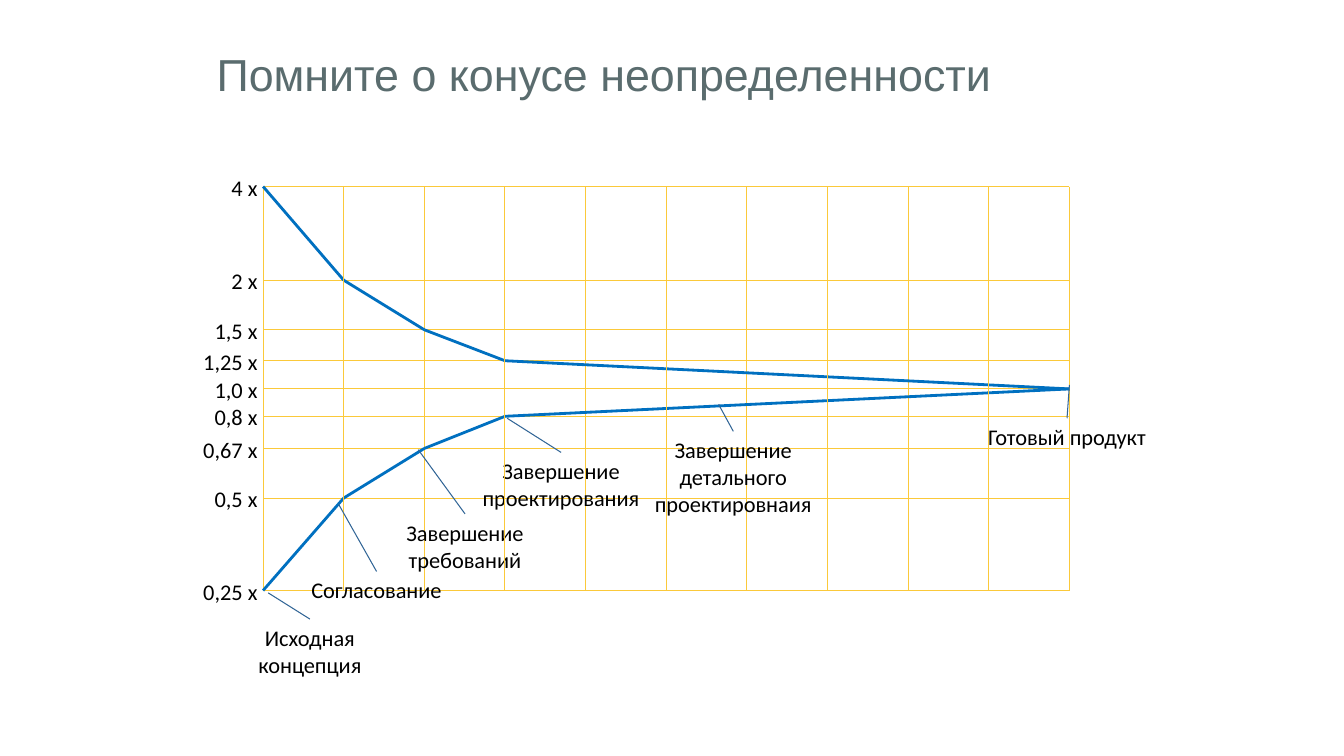
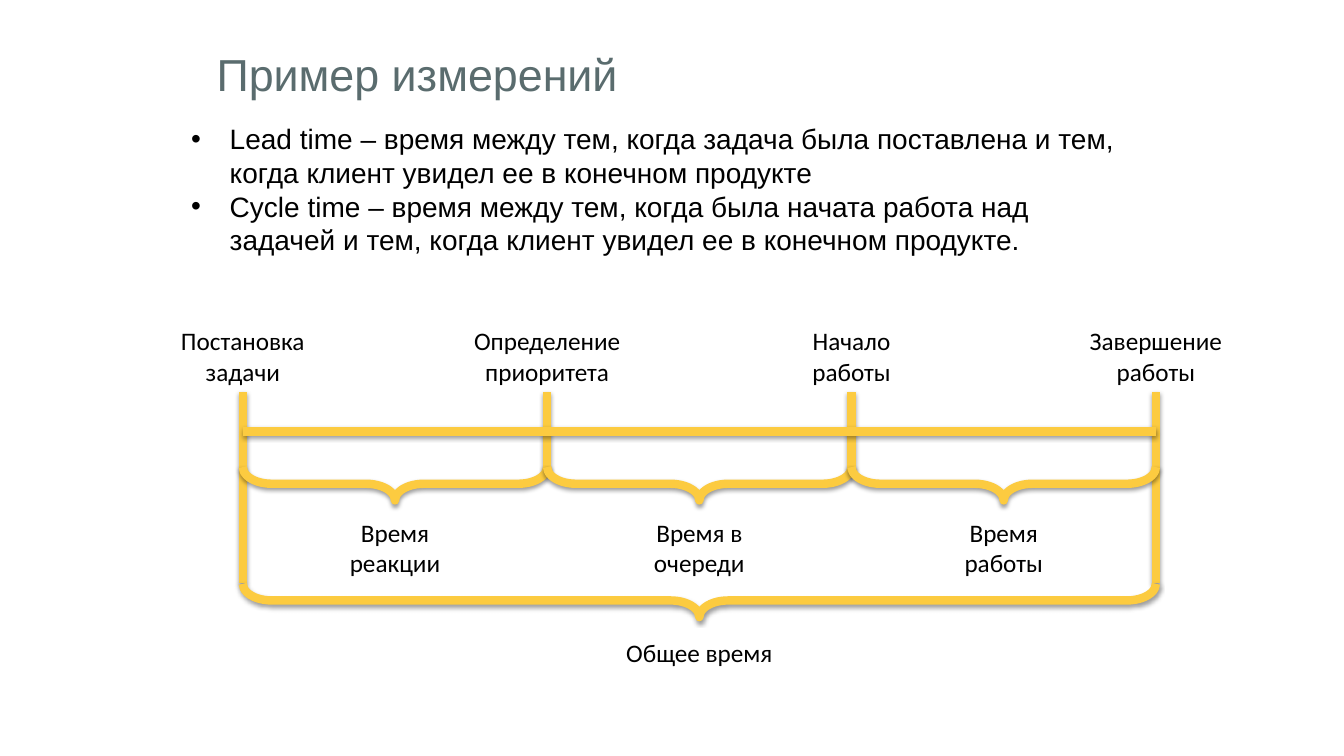
import pptx
import pptx.dml.color
import pptx.enum.shapes
import pptx.enum.text
import pptx.oxml
import pptx.oxml.ns
import pptx.util
from itertools import pairwise

Cm = pptx.util.Cm
Pt = pptx.util.Pt
RGBColor = pptx.dml.color.RGBColor
Align = pptx.enum.text.PP_ALIGN

SLATE = RGBColor(0x5A, 0x6C, 0x6E)
BLACK = RGBColor(0x00, 0x00, 0x00)
AMBER = RGBColor(0xFB, 0xC9, 0x3A)
GOLD = RGBColor(0xFC, 0xCB, 0x40)
BLUE = RGBColor(0x00, 0x70, 0xC0)
NAVY = RGBColor(0x31, 0x65, 0x96)

DRAWING = pptx.oxml.ns.nsdecls("a")
SHADOW = (
    f'<a:effectLst {DRAWING}><a:outerShdw blurRad="40000" dist="20000" dir="5400000" '
    'rotWithShape="0"><a:srgbClr val="000000"><a:alpha val="38000"/></a:srgbClr>'
    "</a:outerShdw></a:effectLst>"
)
NO_EFFECT = f"<a:effectLst {DRAWING}/>"


def write(paragraph, text, *, size, font="Calibri", color=BLACK,
          align=Align.LEFT, bullet=False, spacing=None):
    if bullet:
        properties = paragraph._p.get_or_add_pPr()
        properties.set("marL", str(Cm(0.97)))
        properties.set("indent", str(-Cm(0.97)))
        properties.append(pptx.oxml.parse_xml(f'<a:buFont {DRAWING} typeface="Arial"/>'))
        properties.append(pptx.oxml.parse_xml(f'<a:buChar {DRAWING} char="•"/>'))
    paragraph.alignment = align
    if spacing:
        paragraph.line_spacing = spacing
    run = paragraph.add_run()
    run.text = text
    run.font.size = Pt(size)
    run.font.name = font
    run.font.color.rgb = color


class Deck:
    """Hold the presentation style and the slide being drawn."""

    def __init__(self):
        self.presentation = pptx.Presentation()
        self.presentation.slide_width = Cm(33.87)
        self.presentation.slide_height = Cm(19.05)
        self.slide = None

    def start_slide(self, title):
        layout = self.presentation.slide_layouts[6]
        self.slide = self.presentation.slides.add_slide(layout)
        self.text([title], 5.36, 0.99, 25.37, 2.01, margins=(0.1, 0.2),
                  size=32, font="Arial", color=SLATE)

    def text(self, paragraphs, left, top, width, height, margins=(0.25, 0.13), **style):
        box = self.slide.shapes.add_textbox(Cm(left), Cm(top), Cm(width), Cm(height))
        frame = box.text_frame
        frame.word_wrap = True
        frame.margin_left = frame.margin_right = Cm(margins[0])
        frame.margin_top = frame.margin_bottom = Cm(margins[1])
        for index, text in enumerate(paragraphs):
            paragraph = frame.add_paragraph() if index else frame.paragraphs[0]
            write(paragraph, text, **style)

    def caption(self, text, center, top, width, height, size):
        self.text([text], center - width / 2, top, width, height,
                  size=size, align=Align.CENTER)

    def line(self, start, end, color, weight, effect=NO_EFFECT):
        connector = self.slide.shapes.add_connector(
            pptx.enum.shapes.MSO_CONNECTOR.STRAIGHT,
            Cm(start[0]), Cm(start[1]), Cm(end[0]), Cm(end[1]))
        self.outline(connector, color, weight, effect)

    def brace(self, left, right, middle):
        depth, length = 0.84, right - left
        shape = self.slide.shapes.add_shape(
            pptx.enum.shapes.MSO_SHAPE.LEFT_BRACE,
            Cm((left + right - depth) / 2), Cm(middle - length / 2),
            Cm(depth), Cm(length))
        shape.rotation = 270
        shape.adjustments[0] = 0.868
        shape.fill.background()
        self.outline(shape, GOLD, 6, SHADOW)

    def outline(self, shape, color, weight, effect):
        shape.line.color.rgb = color
        shape.line.width = Pt(weight)
        shape._element.spPr.append(pptx.oxml.parse_xml(effect))


def draw_cone(deck):
    deck.start_slide("Помните о конусе неопределенности")
    left, right = 6.63, 26.95
    columns = [left + (right - left) * index / 10 for index in range(11)]
    scale = {"4 х": 4.7, "2 х": 7.06, "1,5 х": 8.31, "1,25 х": 9.09, "1,0 х": 9.8,
             "0,8 х": 10.49, "0,67 х": 11.3, "0,5 х": 12.55, "0,25 х": 14.88}
    rows = list(scale.values())
    milestones = [columns[index] for index in (0, 1, 2, 3, 10)]
    callouts = [
        ("Исходная концепция", 7.81, 15.6, 4.5, 1.63, (6.76, 14.94)),
        ("Согласование", 9.49, 14.4, 5.16, 0.94, (8.53, 12.7)),
        ("Завершение требований", 11.72, 12.95, 4.5, 1.63, (10.54, 11.33)),
        ("Завершение проектирования", 14.14, 11.4, 4.5, 1.63, (12.78, 10.54)),
        ("Завершение детального проектировнаия", 18.48, 10.87, 4.5, 2.31, (18.11, 10.19)),
        ("Готовый продукт", 26.89, 10.54, 4.5, 1.63, (26.95, 9.7)),
    ]

    def draw_columns(selected):
        for column in selected:
            deck.line((column, rows[0]), (column, rows[-1]), AMBER, 0.75)

    for row in rows:
        deck.line((left, row), (right, row), AMBER, 0.75)
    draw_columns(columns[::2])
    for bound in (rows[:5], rows[:3:-1]):
        for start, end in pairwise(zip(milestones, bound)):
            deck.line(start, end, BLUE, 2)
    for label, row in scale.items():
        deck.text([label], 4.45, row - 0.45, 2.29, 0.94, size=16, align=Align.RIGHT)
    for text, center, top, width, height, _ in callouts:
        deck.caption(text, center, top, width, height, 16)
    draw_columns(columns[1::2])
    for _, center, top, _, _, tip in callouts:
        deck.line((center, top), tip, NAVY, 0.75)


def draw_measurements(deck):
    deck.start_slide("Пример измерений")
    deck.text(
        ["Lead time – время между тем, когда задача была поставлена и тем, "
         "когда клиент увидел ее в конечном продукте",
         "Cycle time – время между тем, когда была начата работа над задачей и тем, "
         "когда клиент увидел ее в конечном продукте."],
        4.72, 3.02, 23.8, 2.01, margins=(0.1, 0.05),
        size=20, font="Arial", bullet=True, spacing=Pt(24))
    events = [("Постановка задачи", 4.11), ("Определение приоритета", 5.44),
              ("Начало работы", 3.35), ("Завершение работы", 4.34)]
    periods = ["Время реакции", "Время в очереди", "Время работы"]
    stations = [6.12 + 7.67 * index for index in range(len(events))]
    first, last = stations[0], stations[-1]

    for station in stations:
        bottom = 14.7 if station in (first, last) else 11.86
        deck.line((station, bottom), (station, 9.88), GOLD, 6, SHADOW)
    deck.line((first, 10.87), (last, 10.87), GOLD, 6, SHADOW)
    for (text, width), station in zip(events, stations):
        deck.caption(text, station, 8.08, width, 1.8, 18)
    for text, (start, end) in zip(periods, pairwise(stations)):
        deck.brace(start, end, 12.19)
        deck.caption(text, (start + end) / 2, 12.9, 4.11, 1.8, 18)
    deck.brace(first, last, 15.13)
    deck.caption("Общее время", (first + last) / 2, 15.93, 8.2, 1.02, 18)


def main():
    deck = Deck()
    draw_cone(deck)
    draw_measurements(deck)
    deck.presentation.save("out.pptx")


if __name__ == "__main__":
    main()
